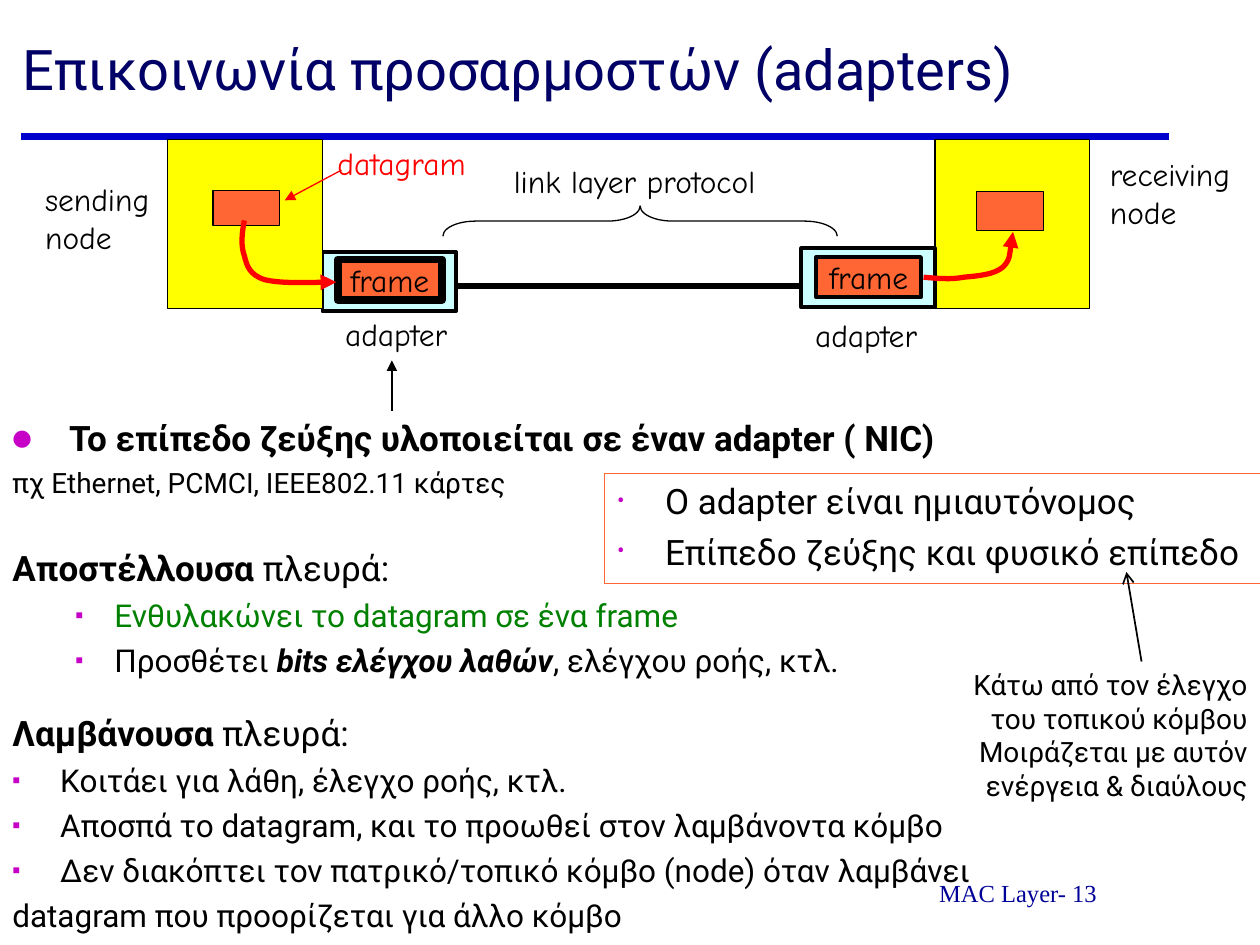
from lxml import etree
from pptx import Presentation
from pptx.dml.color import RGBColor
from pptx.enum import shapes, text
from pptx.oxml import ns
from pptx.util import Inches, Pt

BLACK = RGBColor(0, 0, 0)
RED = RGBColor(0xFF, 0, 0)
GREEN = RGBColor(0, 0x80, 0)
YELLOW = RGBColor(0xFF, 0xFF, 0)
ORANGE = RGBColor(0xFF, 0x66, 0x33)
CYAN = RGBColor(0xCC, 0xFF, 0xFF)
TITLE_BLUE = RGBColor(0, 0, 0x66)
FOOTER_BLUE = RGBColor(0, 0, 0x99)
RULE_BLUE = RGBColor(0, 0, 0xCC)
PURPLE = RGBColor(0xC7, 0, 0xC7)
SANS, COMIC, SERIF = "Roboto", "Comic Neue", "Times New Roman"
SINGLE_LINE = 1.17
LEFT, CENTER, RIGHT = text.PP_ALIGN.LEFT, text.PP_ALIGN.CENTER, text.PP_ALIGN.RIGHT

TITLE = "Επικοινωνία προσαρμοστών (adapters)"
FOOTER = "MAC Layer- 13"

# (size, bullet, level, left margin, hanging, extra gap, [(words, style)])
MAIN_POINTS = [
    (20, "●", 0, 0.45, 0.45, 0, [("Το επίπεδο ζεύξης υλοποιείται σε έναν adapter ( NIC)", "b")]),
    (16, None, 0, 0, 0, 0, [("πχ Ethernet, PCMCI, IEEE802.11 κάρτες", "")]),
    (20, None, 0, 0, 0, 22.5, [("Αποστέλλουσα", "b"), (" πλευρά:", "")]),
    (18, "▪", 1, 0.81, 0.31, 0, [("Ενθυλακώνει το datagram σε ένα frame", "g")]),
    (18, "▪", 1, 0.81, 0.31, 0, [("Προσθέτει ", ""), ("bits ελέγχου λαθών", "bi"),
                                 (", ελέγχου ροής, κτλ.", "")]),
    (20, None, 0, 0, 0, 14, [("Λαμβάνουσα", "b"), (" πλευρά:", "")]),
    (18, "▪", 0, 0.38, 0.38, 0, [("Κοιτάει για λάθη, έλεγχο ροής, κτλ.", "")]),
    (18, "▪", 0, 0.38, 0.38, 0, [("Αποσπά το datagram, και το προωθεί στον λαμβάνοντα κόμβο", "")]),
    (18, "▪", 0, 0.38, 0.38, 0, [("Δεν διακόπτει τον πατρικό/τοπικό κόμβο (node) όταν λαμβάνει", "")]),
    (18, None, 0, 0, 0, 0, [("datagram που προορίζεται για άλλο κόμβο", "")]),
]
ADAPTER_POINTS = [
    (20, "•", 0, 0.38, 0.38, 0, [(words, "")])
    for words in ("Ο adapter είναι ημιαυτόνομος", "Επίπεδο ζεύξης και φυσικό επίπεδο")
]
SHARING_NOTE = ["Κάτω από τον έλεγχο", "του τοπικού κόμβου",
                "Μοιράζεται με αυτόν", "ενέργεια & διαύλους"]
LABELS = [
    ((0.26, 1.38, 1.07, 0.7), ["sending", "node"], BLACK),
    ((8.71, 1.18, 1.25, 0.7), ["receiving", "node"], BLACK),
    ((2.58, 1.09, 1.3, 0.4), ["datagram"], RED),
    ((2.64, 2.45, 1.11, 0.4), ["adapter"], BLACK),
    ((6.37, 2.46, 1.11, 0.4), ["adapter"], BLACK),
    ((3.98, 1.24, 2.3, 0.4), ["link layer protocol"], BLACK),
]
NODES = [(1.33, (1.69, 1.51, 0.53, 0.28)), (7.42, (7.75, 1.52, 0.53, 0.31))]
SEND_CURVE = [(1.94, 1.75), (1.92, 1.85), (1.91, 1.95), (1.94, 2.03), (1.96, 2.11),
              (1.98, 2.18), (2.1, 2.22), (2.22, 2.25), (2.57, 2.24), (2.67, 2.24)]
RECEIVE_CURVE = [(7.33, 2.2), (7.44, 2.21), (7.55, 2.22), (7.65, 2.2), (7.76, 2.19),
                 (7.89, 2.18), (7.96, 2.12), (8.02, 2.06), (8.03, 1.89), (8.04, 1.84)]

deck = Presentation()
deck.slide_width, deck.slide_height = Inches(10), Inches(7.5)
slide = deck.slides.add_slide(deck.slide_layouts[5])


def inches(values):
    return [Inches(value) for value in values]


def add_xml(parent, tag, **attributes):
    return etree.SubElement(parent, ns.qn(tag), attributes)


def add_run(paragraph, words, size, font, color, style=""):
    run = paragraph.add_run()
    run.text = words
    run.font.size, run.font.name = Pt(size), font
    run.font.bold, run.font.italic = "b" in style, "i" in style
    run.font.color.rgb = GREEN if "g" in style else color


def write_lines(frame, lines, size, font, color, align=LEFT):
    for index, line in enumerate(lines):
        paragraph = frame.paragraphs[0] if index == 0 else frame.add_paragraph()
        paragraph.alignment = align
        add_run(paragraph, line, size, font, color)


def add_text(box, lines, size, font, color, align=LEFT, wrap=True):
    frame = slide.shapes.add_textbox(*inches(box)).text_frame
    frame.word_wrap = wrap
    write_lines(frame, lines, size, font, color, align)


def add_points(box, points):
    holder = slide.shapes.add_textbox(*inches(box))
    frame = holder.text_frame
    frame.word_wrap = True
    for index, (size, bullet, level, margin, hanging, gap, runs) in enumerate(points):
        paragraph = frame.add_paragraph() if index else frame.paragraphs[0]
        paragraph.level = level
        paragraph.space_before = Pt(round(size * SINGLE_LINE * 0.2 + gap, 1) if index else 0)
        properties = paragraph._p.get_or_add_pPr()
        properties.set("marL", str(Inches(margin)))
        properties.set("indent", str(-Inches(hanging)))
        if bullet:
            add_xml(add_xml(properties, "a:buClr"), "a:srgbClr", val=str(PURPLE))
            add_xml(properties, "a:buSzPct", val="64000")
            add_xml(properties, "a:buFont", typeface=SANS)
            add_xml(properties, "a:buChar", char=bullet)
        for words, style in runs:
            add_run(paragraph, words, size, SANS, BLACK, style)
    return holder


def add_block(box, fill, line, width, preset=shapes.MSO_SHAPE.RECTANGLE):
    block = slide.shapes.add_shape(preset, *inches(box))
    block.shadow.inherit = False
    if fill is None:
        block.fill.background()
    else:
        block.fill.solid()
        block.fill.fore_color.rgb = fill
    block.line.color.rgb, block.line.width = line, Pt(width)
    return block


def add_line(start, end, color, width, head=None):
    line = slide.shapes.add_connector(shapes.MSO_CONNECTOR.STRAIGHT, *inches(start + end))
    line.line.color.rgb, line.line.width = color, Pt(width)
    if head:
        add_xml(line.line._get_or_add_ln(), "a:tailEnd", type=head)
    add_xml(line._element.spPr, "a:effectLst")


def add_curve(points):
    pen = slide.shapes.build_freeform(*inches(points[0]))
    pen.add_line_segments([inches(point) for point in points[1:]], close=False)
    curve = pen.convert_to_shape()
    curve.shadow.inherit = False
    curve.fill.background()
    curve.line.color.rgb, curve.line.width = RED, Pt(3)
    add_xml(curve.line._get_or_add_ln(), "a:tailEnd", type="triangle")
    outline = next(curve._element.iter(ns.qn("a:path")))
    segments = outline.findall(ns.qn("a:lnTo"))
    for first in range(0, len(segments), 3):
        bezier = add_xml(outline, "a:cubicBezTo")
        for segment in segments[first:first + 3]:
            bezier.append(segment[0])
            outline.remove(segment)


def add_adapter(left, top, frame_top, frame_width):
    add_block((left, top, 1.06, 0.47), CYAN, BLACK, 2.25)
    frame = add_block((left + 0.12, frame_top, 0.83, 0.32), ORANGE, BLACK, frame_width).text_frame
    frame.word_wrap = False
    frame.vertical_anchor = text.MSO_ANCHOR.MIDDLE
    write_lines(frame, ["frame"], 18, COMIC, BLACK, CENTER)


title = slide.shapes.title
title.left, title.top, title.width, title.height = inches((0.08, 0.02, 9.67, 0.84))
title.text_frame.vertical_anchor = text.MSO_ANCHOR.BOTTOM
write_lines(title.text_frame, [TITLE], 32, SANS, TITLE_BLUE)

add_line((0.17, 1.08), (9.28, 1.08), RULE_BLUE, 4)
add_text((6.41, 6.92, 3.34, 0.33), [FOOTER], 14, SERIF, FOOTER_BLUE, CENTER)
add_points((0, 3.26, 10, 4.1), MAIN_POINTS)
adapter_box = add_points((4.8, 3.76, 5.23, 0.87), ADAPTER_POINTS)
adapter_box.line.color.rgb, adapter_box.line.width = ORANGE, Pt(0.75)

add_adapter(2.56, 2, 2.06, 4.5)
add_line((3.61, 2.27), (6.37, 2.27), BLACK, 3)
for node_left, datagram in NODES:
    add_block((node_left, 1.11, 1.23, 1.34), YELLOW, BLACK, 0.75)
    add_block(datagram, ORANGE, BLACK, 0.75)
add_adapter(6.36, 1.97, 2.04, 2.25)
for box, lines, color in LABELS:
    add_text(box, lines, 18, COMIC, color, wrap=False)
brace = add_block((4.96, 0.19, 0.24, 3.13), None, BLACK, 0.75, shapes.MSO_SHAPE.LEFT_BRACE)
brace.rotation = 90
brace.adjustments[0], brace.adjustments[1] = 1.08, 0.5
add_curve(SEND_CURVE)
add_curve(RECEIVE_CURVE)
add_line((2.71, 1.35), (2.26, 1.59), RED, 0.75, "triangle")
add_line((3.11, 3.26), (3.11, 2.86), BLACK, 1, "triangle")
add_text((7.62, 5.25, 2.38, 1.45), SHARING_NOTE, 16, SANS, BLACK, RIGHT)
add_line((9.06, 5.25), (8.94, 4.54), BLACK, 1, "arrow")

deck.save("out.pptx")
